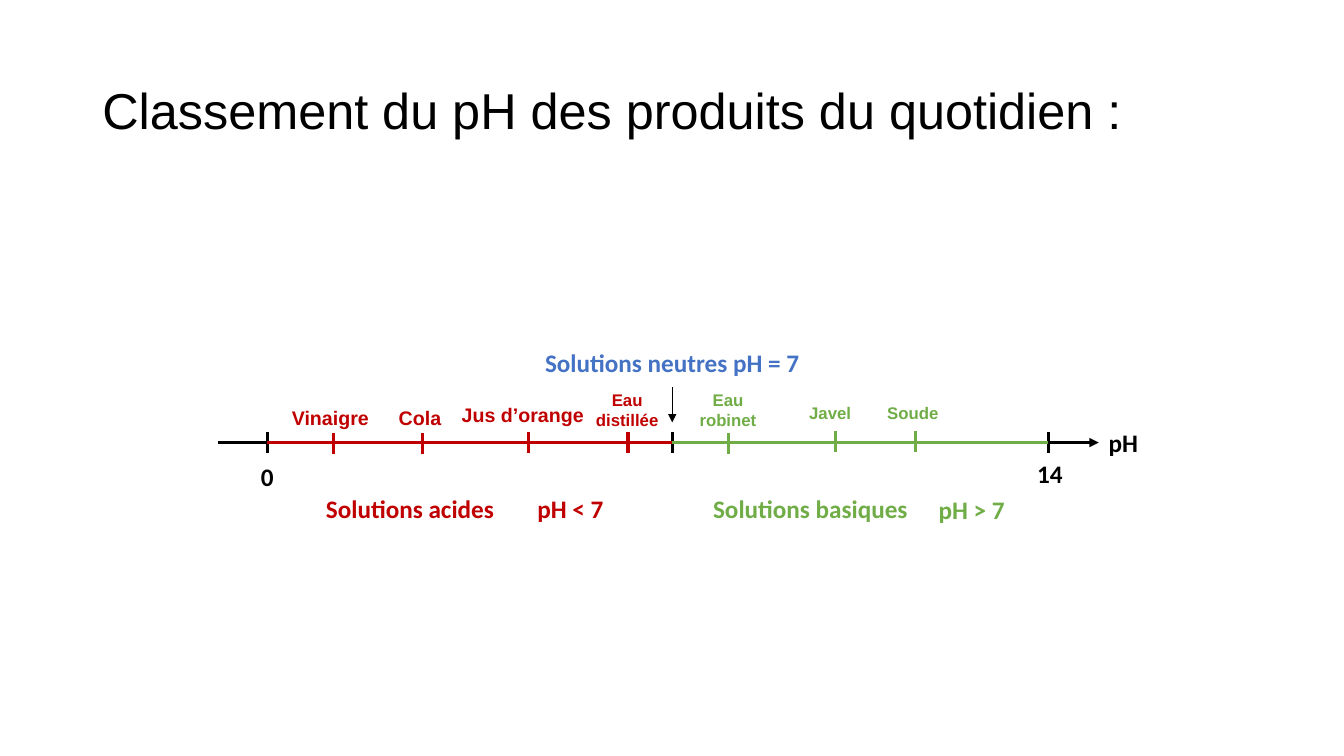
"""Builds a slide that ranks everyday products along a pH axis."""
from dataclasses import dataclass

from lxml import etree
from pptx import Presentation
from pptx.dml.color import RGBColor
from pptx.enum.shapes import MSO_CONNECTOR
from pptx.enum.text import MSO_ANCHOR, PP_ALIGN
from pptx.oxml.ns import qn
from pptx.util import Pt

STRAIGHT = MSO_CONNECTOR.STRAIGHT
TOP, MIDDLE = MSO_ANCHOR.TOP, MSO_ANCHOR.MIDDLE
LEFT, CENTER = PP_ALIGN.LEFT, PP_ALIGN.CENTER


@dataclass(frozen=True)
class Theme:
    black: str = "000000"
    acid: str = "C00000"
    base: str = "70AD47"
    neutral: str = "4472C4"
    heading_font: str = "Arial"
    body_font: str = "Calibri"
    title: int = 36
    body: int = 18
    product: int = 14
    small: int = 12
    thick: float = 2.25
    thin: float = 1


THEME = Theme()
AXIS_Y = 316.1
TICK = 15
ZERO_X, NEUTRAL_X, END_X = 190.8, 480.24, 748.8

SCALE_LABELS = [("pH", 784.8, 301.7), ("14", 733.7, 324), ("0", 179.3, 326.2)]
CAPTIONS = [
    ("Solutions neutres pH = 7", 480.2, 244.8, THEME.neutral),
    ("Solutions acides", 292.9, 348.5, THEME.acid),
    ("pH < 7", 407.5, 348.5, THEME.acid),
    ("Solutions basiques", 578.9, 348.5, THEME.base),
    ("pH > 7", 694.1, 349.2, THEME.base),
]
PRODUCTS = [
    ("Vinaigre", 236, 286.6, THEME.product, 238.3, 309.6),
    ("Cola", 300, 286.6, THEME.product, 301.7, 309.6),
    ("Jus d’orange", 373.5, 284.4, THEME.product, 377.3, 308.9),
    ("Eau\ndistillée", 448, 275, THEME.small, 448.6, 308.9),
    ("Eau\nrobinet", 520, 275, THEME.small, 520.6, 309.6),
    ("Javel", 593, 284.1, THEME.small, 596.9, 308.2),
    ("Soude", 652, 284.1, THEME.small, 653.8, 308.2),
]


class Board:
    """Holds the theme and the slide being drawn."""

    def __init__(self, slide, theme):
        self.s, self.theme = slide, theme

    def text(self, text, x, y, w, h, *, size=None, font=None, color=None,
             bold=True, align=LEFT, anchor=TOP, spacing=None):
        """Add a text box with one paragraph per line of text."""
        tf = self.s.shapes.add_textbox(Pt(x), Pt(y), Pt(w), Pt(h)).text_frame
        tf.word_wrap = True
        tf.vertical_anchor = anchor
        tf.text = text
        for p in tf.paragraphs:
            p.alignment = align
            p.line_spacing = spacing
            f = p.runs[0].font
            f.name = font or self.theme.body_font
            f.size = Pt(size or self.theme.body)
            f.bold = bold
            f.color.rgb = RGBColor.from_string(color or self.theme.black)

    def line(self, x1, y1, x2, y2, color, width, arrow=False):
        """Add a straight line, with an arrowhead at its end if asked."""
        sp = self.s.shapes.add_connector(STRAIGHT, Pt(x1), Pt(y1), Pt(x2), Pt(y2))
        sp.line.color.rgb = RGBColor.from_string(color)
        sp.line.width = Pt(width)
        props = sp._element.spPr
        if arrow:
            etree.SubElement(props.find(qn("a:ln")), qn("a:tailEnd"), type="triangle")
        etree.SubElement(props, qn("a:effectLst"))

    def tick(self, x, y, color):
        """Add a tick mark across the axis."""
        self.line(x, y, x, y + TICK, color, self.theme.thick)

    def caption(self, text, cx, y, color):
        """Add a caption centred on cx."""
        self.text(text, cx - 107, y, 214, 29, color=color, align=CENTER)

    def product(self, text, cx, y, size, tick_x, tick_y):
        """Add a product name and its tick in the colour of its side."""
        color = self.theme.acid if tick_x < NEUTRAL_X else self.theme.base
        self.text(text, cx - 59, y, 118, 29, size=size, color=color,
                  font=self.theme.heading_font, align=CENTER)
        self.tick(tick_x, tick_y, color)


def main():
    """Build and save the slide."""
    prs = Presentation()
    prs.slide_width, prs.slide_height = Pt(960), Pt(540)
    board = Board(prs.slides.add_slide(prs.slide_layouts[6]), THEME)

    board.text("Classement du pH des produits du quotidien :", 66, 28.8, 828, 104.4,
               size=THEME.title, font=THEME.heading_font, bold=False,
               anchor=MIDDLE, spacing=0.9)

    board.line(155.5, AXIS_Y, 784.8, AXIS_Y, THEME.black, THEME.thick, arrow=True)
    for x in (ZERO_X, NEUTRAL_X, END_X):
        board.tick(x, 308.9, THEME.black)
    board.line(END_X, AXIS_Y, NEUTRAL_X, AXIS_Y, THEME.base, THEME.thick)
    board.line(NEUTRAL_X, AXIS_Y, ZERO_X, AXIS_Y, THEME.acid, THEME.thick)
    board.line(NEUTRAL_X, 276.5, NEUTRAL_X, 301.7, THEME.black, THEME.thin, arrow=True)

    for label, x, y in SCALE_LABELS:
        board.text(label, x, y, 59, 29)
    for caption in CAPTIONS:
        board.caption(*caption)
    for product in PRODUCTS:
        board.product(*product)

    prs.save("out.pptx")


if __name__ == "__main__":
    main()
